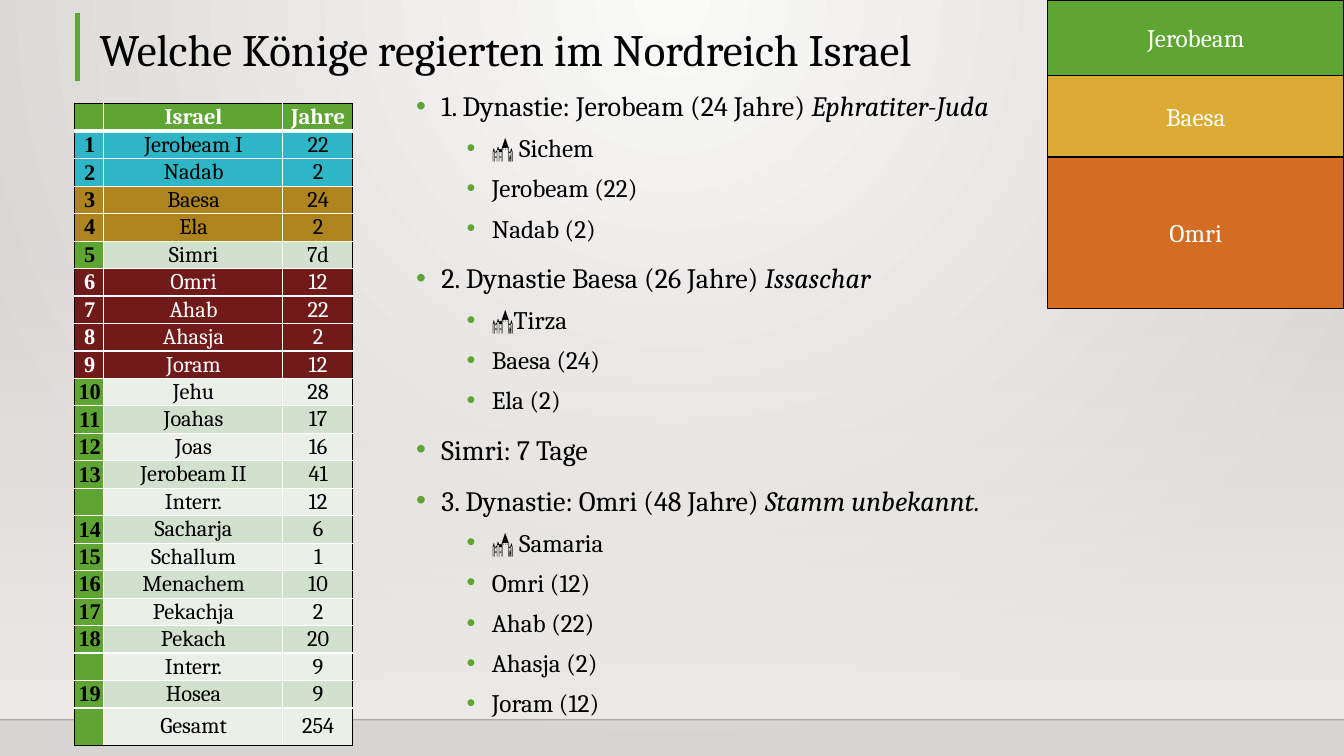
from lxml.etree import SubElement
from pptx import Presentation
from pptx.dml.color import RGBColor
from pptx.enum.shapes import MSO_CONNECTOR, MSO_SHAPE
from pptx.enum.text import MSO_ANCHOR, PP_ALIGN
from pptx.oxml.ns import qn
from pptx.util import Inches, Pt

COLORS = {
    "black": "000000", "white": "FFFFFF", "green": "5FA534",
    "yellow": "DCAB34", "orange": "D26D23", "teal": "2FB6C6",
    "ochre": "AE841E", "red": "711A1A", "mint": "D2E1CE", "pale": "EAF0E8",
    "light": "FAFAF9", "gray": "D7D5D2", "floor": "EDEBE7",
}
RGB = {name: RGBColor.from_string(code) for name, code in COLORS.items()}


def style(para, size, color, font="Cambria", bold=False):
    para.font.size = Pt(size)
    para.font.name = font
    para.font.bold = bold
    para.font.color.rgb = RGB[color]


def rule(x1, y1, x2, y2, color, width):
    line = slide.shapes.add_connector(
        MSO_CONNECTOR.STRAIGHT, Inches(x1), Inches(y1), Inches(x2), Inches(y2))
    line.line.color.rgb = RGB[color]
    line.line.width = Pt(width)
    SubElement(line.element.spPr, qn("a:effectLst"))
    return line


deck = Presentation()
deck.slide_width, deck.slide_height = Inches(13.33), Inches(7.5)
slide = deck.slides.add_slide(deck.slide_layouts[6])

# Background: round gradient
back = slide.background.fill
back.gradient()
for stop, name in zip(back.gradient_stops, ("light", "gray")):
    stop.color.rgb = RGB[name]
grad = slide.element.find(".//" + qn("a:gradFill"))
grad.remove(grad.find(qn("a:lin")))
round_fill = SubElement(grad, qn("a:path"), path="circle")
SubElement(round_fill, qn("a:fillToRect"), l="43000", t="0", r="43000", b="100000")

# Floor: fades in from clear to solid
floor = slide.shapes.add_shape(
    MSO_SHAPE.RECTANGLE, 0, Inches(2.2), Inches(13.33), Inches(4.93))
floor.shadow.inherit = False
floor.line.fill.background()
floor.fill.gradient()
floor.fill.gradient_angle = 270
for stop in floor.fill.gradient_stops:
    stop.color.rgb = RGB["floor"]
SubElement(floor.element.find(".//" + qn("a:srgbClr")), qn("a:alpha"), val="0")

# Lines
edge = rule(0, 7.14, 13.33, 7.14, "black", 1)
SubElement(edge.element.find(".//" + qn("a:srgbClr")), qn("a:alpha"), val="20000")
rule(0.77, 0.13, 0.77, 0.8, "green", 3)

# Dynasty blocks
top = 0
for name, color, height in (("Jerobeam", "green", 0.75), ("Baesa", "yellow", 0.81),
                            ("Omri", "orange", 1.5)):
    block = slide.shapes.add_shape(
        MSO_SHAPE.RECTANGLE, Inches(10.39), Inches(top), Inches(2.94), Inches(height))
    block.shadow.inherit = False
    block.fill.solid()
    block.fill.fore_color.rgb = RGB[color]
    block.line.color.rgb = RGB["black"]
    block.line.width = Pt(1)
    block.text_frame.vertical_anchor = MSO_ANCHOR.MIDDLE
    para = block.text_frame.paragraphs[0]
    para.text = name
    para.alignment = PP_ALIGN.CENTER
    style(para, 18, "white")
    top += height

# Title
title = slide.shapes.add_textbox(
    Inches(0.89), Inches(0.13), Inches(11.57), Inches(0.68)).text_frame
title.word_wrap = True
title.vertical_anchor = MSO_ANCHOR.BOTTOM
para = title.paragraphs[0]
para.text = "Welche Könige regierten im Nordreich Israel"
para.line_spacing = 0.9
style(para, 32, "black")

# Table of kings
kings = [
    ("", "Israel", "Jahre"),
    ("1", "Jerobeam I", "22"), ("2", "Nadab", "2"), ("3", "Baesa", "24"),
    ("4", "Ela", "2"), ("5", "Simri", "7d"), ("6", "Omri", "12"),
    ("7", "Ahab", "22"), ("8", "Ahasja", "2"), ("9", "Joram", "12"),
    ("10", "Jehu", "28"), ("11", "Joahas", "17"), ("12", "Joas", "16"),
    ("13", "Jerobeam II", "41"), ("", "Interr.", "12"), ("14", "Sacharja", "6"),
    ("15", "Schallum", "1"), ("16", "Menachem", "10"), ("17", "Pekachja", "2"),
    ("18", "Pekach", "20"), ("", "Interr.", "9"), ("19", "Hosea", "9"),
    ("", "Gesamt", "254"),
]
houses = {0: "green", 1: "teal", 2: "teal", 3: "ochre", 4: "ochre",
          6: "red", 7: "red", 8: "red", 9: "red"}
last = len(kings) - 1
table = slide.shapes.add_table(
    len(kings), 3, Inches(0.74), Inches(1.03), Inches(2.76), Inches(6.37)).table
table.first_row = table.horz_banding = False
for col, width in zip(table.columns, (0.29, 1.77, 0.7)):
    col.width = Inches(width)
for r, king in enumerate(kings):
    # The rows above the total share six inches
    table.rows[r].height = Inches(0.37 if r == last else 6 / last)
    band = houses.get(r, "mint" if r % 2 else "pale")
    ink = "white" if r == 0 or band == "red" else "black"
    for c, text in enumerate(king):
        cell = table.cell(r, c)
        cell.margin_left = Inches(0.01)
        cell.margin_right = cell.margin_top = cell.margin_bottom = 0
        cell.vertical_anchor = MSO_ANCHOR.MIDDLE
        para = cell.text_frame.paragraphs[0]
        para.alignment = PP_ALIGN.CENTER
        para.line_spacing = 1.0
        if text:
            para.text = text
            style(para, 16, ink, "Cambria" if c else "Times New Roman",
                  c == 0 or r == 0)
        else:
            SubElement(para._p, qn("a:endParaRPr"), sz="1600")
        # Borders: black outside, white inside, thick under the header
        props = cell._tc.get_or_add_tcPr()
        for side, outer in (("L", c == 0), ("R", c == 2), ("T", r == 0), ("B", r == last)):
            thick = (side == "B" and r == 0) or (side == "T" and r == 1)
            line = SubElement(props, qn("a:ln" + side), w=str(Pt(3 if thick else 1)))
            solid = SubElement(line, qn("a:solidFill"))
            SubElement(solid, qn("a:srgbClr"), val=COLORS["black" if outer else "white"])
        cell.fill.solid()
        cell.fill.fore_color.rgb = RGB["green" if c == 0 and r not in houses else band]

# Dynasty list: heading, tribe in italics, points below
groups = [
    ("1. Dynastie: Jerobeam (24 Jahre) ", "Ephratiter-Juda",
     ["🏰 Sichem", "Jerobeam (22)", "Nadab (2)"]),
    ("2. Dynastie Baesa (26 Jahre) ", "Issaschar",
     ["🏰Tirza", "Baesa (24)", "Ela (2)"]),
    ("Simri: 7 Tage", "", []),
    ("3. Dynastie: Omri (48 Jahre) ", "Stamm unbekannt.",
     ["🏰 Samaria", "Omri (12)", "Ahab (22)", "Ahasja (2)", "Joram (12)"]),
]
items = []
for head, tribe, points in groups:
    items.append((0, head, tribe))
    items += [(1, point, "") for point in points]
body = slide.shapes.add_textbox(
    Inches(4.03), Inches(0.8), Inches(8.97), Inches(6.57)).text_frame
body.word_wrap = True
for i, (level, text, tribe) in enumerate(items):
    para = body.add_paragraph() if i else body.paragraphs[0]
    para.level = level
    para.line_spacing = 1.1
    para.space_before = Pt((5 if level else 10) if i else 0)
    props = para._p.get_or_add_pPr()
    props.set("marL", str(Inches(0.75 if level else 0.25)))
    props.set("indent", str(Inches(-0.25)))
    tint = SubElement(props, qn("a:buClr"))
    SubElement(tint, qn("a:srgbClr"), val=COLORS["green"])
    SubElement(props, qn("a:buFont"), typeface="Arial")
    SubElement(props, qn("a:buChar"), char="•")
    style(para, 18 if level else 20, "black")
    para.add_run().text = text
    if tribe:
        run = para.add_run()
        run.text = tribe
        run.font.italic = True

deck.save("out.pptx")
